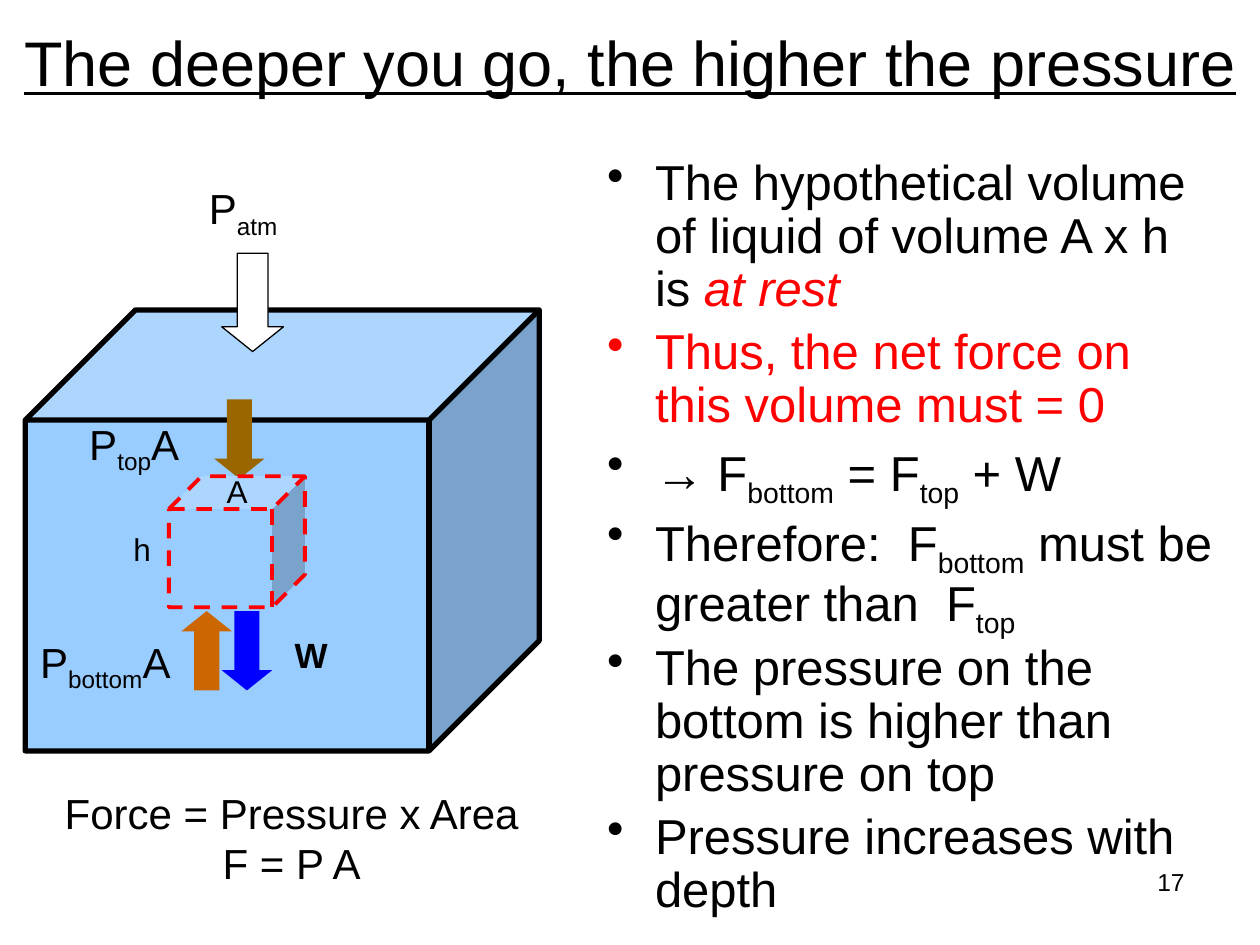
from lxml import etree
from pptx import Presentation
from pptx.dml.color import RGBColor
from pptx.enum import dml, shapes, text
from pptx.oxml.ns import qn
from pptx.util import Inches, Pt

HUE = {"ink": "000000", "paper": "FFFFFF", "water": "99CCFF", "red": "FF0000",
       "blue": "0000FF", "brown": "996600", "rust": "CC6600"}
TITLE = "The deeper you go, the higher the pressure"
POINTS = [
    ("ink", [("The hypothetical volume of liquid of volume A x h is ", ""),
             ("at rest", "hot")]),
    ("red", [("Thus, the net force on this volume must = 0", "")]),
    ("ink", [("→ F", ""), ("bottom", "sub"), (" = F", ""), ("top", "sub"), (" + W", "")]),
    ("ink", [("Therefore:  F", ""), ("bottom", "sub"),
             (" must be greater than  F", ""), ("top", "sub")]),
    ("ink", [("The pressure on the bottom is higher than pressure on top", "")]),
    ("ink", [("Pressure increases with depth", "")]),
]
CUBES = [
    ((0.2, 2.46, 4.08, 3.5), "ink", 3, None),
    ((1.34, 3.78, 1.08, 1.04), "red", 2.25, dml.MSO_LINE.DASH),
]
ARROWS = [
    ((1.76, 4.85, 0.4, 0.63), "blue", None, 0),
    ((1.7, 3.17, 0.4, 0.63), "brown", None, 0),
    ((1.44, 4.85, 0.4, 0.63), "rust", None, 180),
    ((1.76, 2.01, 0.49, 0.78), "paper", "ink", 0),
]
LABELS = [
    ((2.24, 4.98, 0.52, 0.43), 20, "l", True, [[("W", "bold")]]),
    ((0.61, 3.27, 0.95, 0.5), 24, "l", False, [[("P", ""), ("top", "sub"), ("A", "")]]),
    ((0.22, 5, 1.35, 0.5), 24, "l", True, [[("P", ""), ("bottom", "sub"), ("A", "")]]),
    ((1.7, 3.7, 0.37, 0.4), 18, "l", False, [[("A", "")]]),
    ((0.96, 4.16, 0.34, 0.4), 18, "l", False, [[("h", "")]]),
    ((1.56, 1.4, 0.81, 0.5), 24, "l", True, [[("P", ""), ("atm", "sub")]]),
    ((7.17, 6.83, 2.33, 0.52), 14, "r", True, [[("17", "")]]),
    ((0.36, 6.2, 3.91, 0.91), 24, "c", True,
     [[("Force = Pressure x Area", "")], [("F = P A", "")]]),
]
ALIGN = {"l": text.PP_ALIGN.LEFT, "c": text.PP_ALIGN.CENTER, "r": text.PP_ALIGN.RIGHT}


def rgb(name):
    return RGBColor.from_string(HUE[name])


def style(para, size, hue="ink", align="l"):
    para.alignment = ALIGN[align]
    font = para.font
    font.name, font.size = "Arial", Pt(size)
    font.color.rgb = rgb(hue)


def write(para, runs):
    for words, look in runs:
        run = para.add_run()
        run.text = words
        if look == "sub":
            run._r.get_or_add_rPr().set("baseline", "-25000")
        elif look == "hot":
            run.font.italic = True
            run.font.color.rgb = rgb("red")
        elif look == "bold":
            run.font.bold = True


def bullet(para):
    props = para._p.get_or_add_pPr()
    props.set("marL", str(Inches(0.38)))
    props.set("indent", str(Inches(-0.38)))
    mark = etree.Element(qn("a:buChar"), char="•")
    props.insert_element_before(mark, "a:tabLst", "a:defRPr", "a:extLst")


def box(slide, at, wrap=True):
    frame = slide.shapes.add_textbox(*map(Inches, at)).text_frame
    frame.word_wrap = wrap
    return frame


def paras(frame, count):
    return [frame.paragraphs[0]] + [frame.add_paragraph() for _ in range(count - 1)]


def solid(slide, kind, at, fill, line, width):
    shape = slide.shapes.add_shape(kind, *map(Inches, at))
    shape.shadow.inherit = False
    shape.fill.solid()
    shape.fill.fore_color.rgb = rgb(fill)
    if line:
        shape.line.color.rgb = rgb(line)
        shape.line.width = Pt(width)
    else:
        shape.line.fill.background()
    return shape


def cube(slide, at, line, width, dash):
    shape = solid(slide, shapes.MSO_SHAPE.CUBE, at, "water", line, width)
    shape.adjustments[0] = 0.25
    if dash:
        shape.line.dash_style = dash


def arrow(slide, at, fill, line, turn):
    shape = solid(slide, shapes.MSO_SHAPE.DOWN_ARROW, at, fill, line, 0.75)
    shape.adjustments[0], shape.adjustments[1] = 0.5, 0.4
    shape.rotation = turn


def main():
    deck = Presentation()
    deck.slide_width, deck.slide_height = Inches(10), Inches(7.5)
    slide = deck.slides.add_slide(deck.slide_layouts[5])

    title = slide.shapes.title
    title.left, title.top, title.width, title.height = map(Inches, (0, 0, 10, 0.98))
    title.text = TITLE
    title.text_frame.vertical_anchor = text.MSO_ANCHOR.MIDDLE
    style(title.text_frame.paragraphs[0], 36, align="c")
    title.text_frame.paragraphs[0].font.underline = True

    cube(slide, *CUBES[0])
    for item in ARROWS:
        arrow(slide, *item)
    cube(slide, *CUBES[1])

    for at, size, align, wrap, lines in LABELS:
        for para, runs in zip(paras(box(slide, at, wrap), len(lines)), lines):
            style(para, size, align=align)
            write(para, runs)

    body = box(slide, (4.72, 1.21, 5.01, 6.2))
    for para, (hue, runs) in zip(paras(body, len(POINTS)), POINTS):
        style(para, 28, hue)
        para.line_spacing, para.space_before = 0.9, Pt(5.6)
        bullet(para)
        write(para, runs)

    deck.save("out.pptx")


if __name__ == "__main__":
    main()
